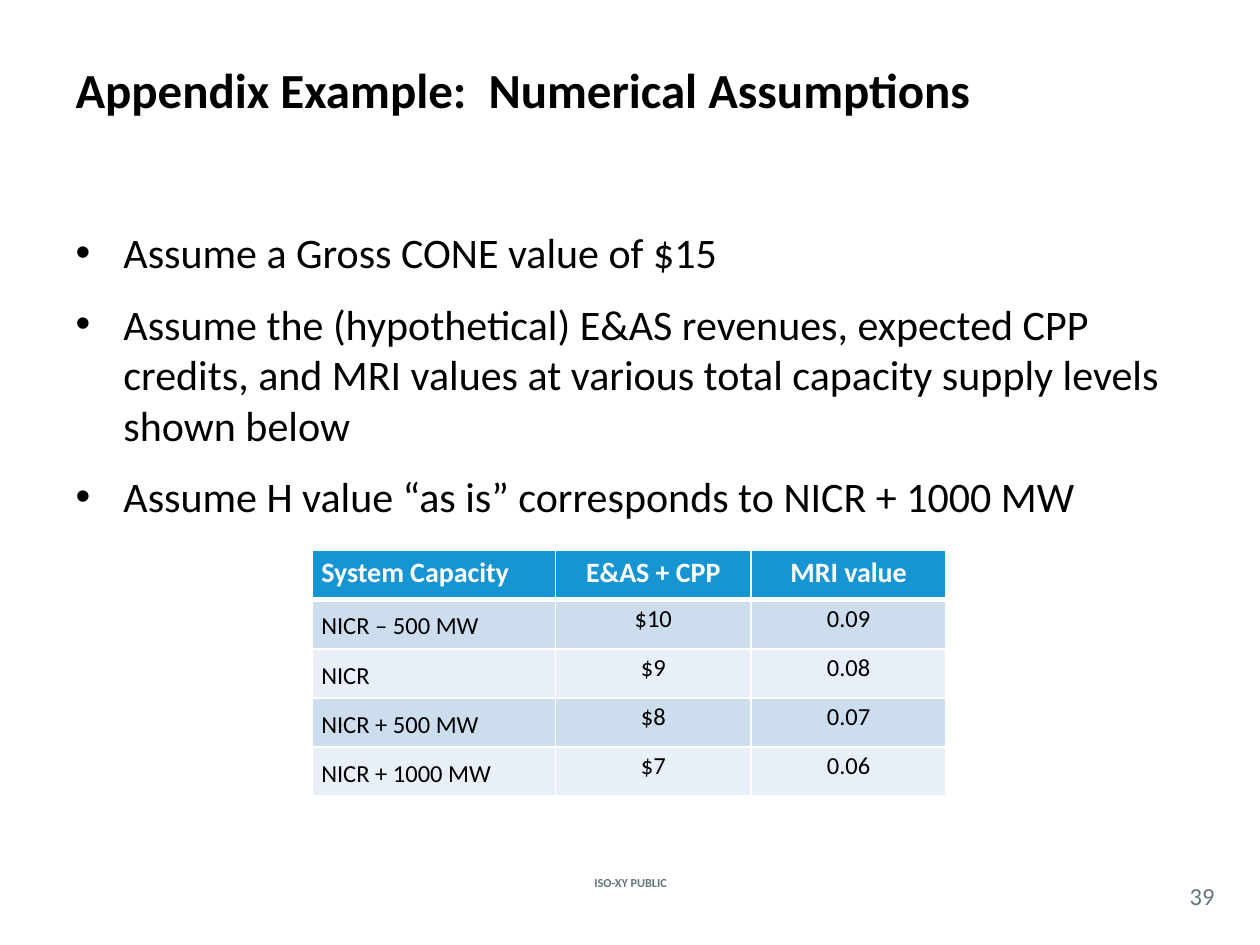
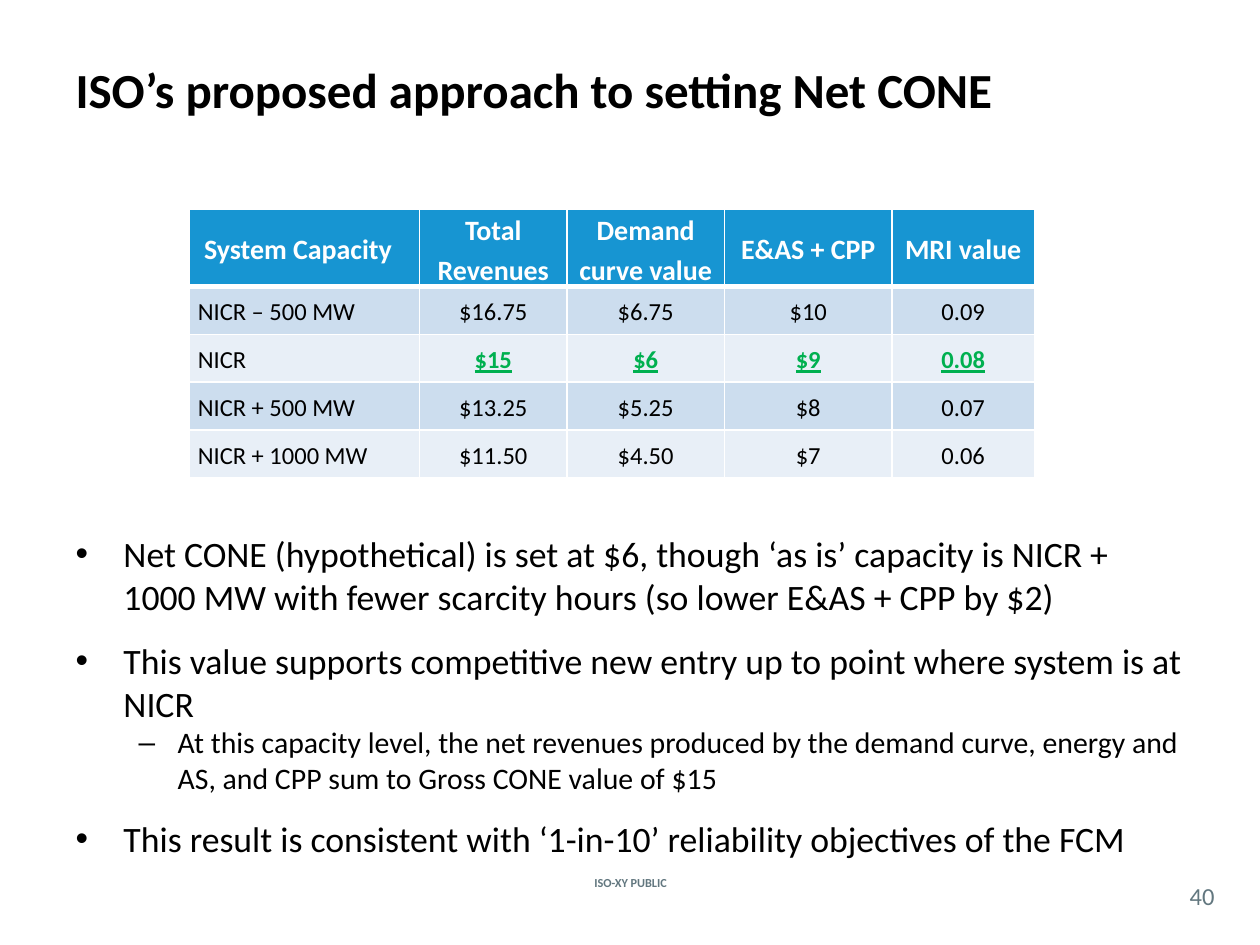
from lxml import etree
from pptx import Presentation
from pptx.dml.color import RGBColor
from pptx.enum import text
from pptx.oxml import ns
from pptx.util import Inches, Pt

COLORS = {
    "ink": "000000", "white": "FFFFFF", "muted": "62777F", "header": "1795D2",
    "band_dark": "CCDDEE", "band_light": "E8EFF7", "highlight": "00B050",
}
FONT = "Calibri"
FOOTER = "ISO-XY PUBLIC"
LEFT, CENTER = text.PP_ALIGN.LEFT, text.PP_ALIGN.CENTER
TOP, MIDDLE = text.MSO_ANCHOR.TOP, text.MSO_ANCHOR.MIDDLE
# Bullet character, left margin and hanging indent for each list level
LEVELS = [("•", 0.38, 0.38), ("–", 0.81, 0.31)]


def rgb(name):
    return RGBColor.from_string(COLORS[name])


class Deck:
    def __init__(self):
        self.presentation = Presentation()
        self.presentation.slide_width = Inches(10)
        self.presentation.slide_height = Inches(7.5)
        self.slide = None

    def add_slide(self, title, number):
        layout = self.presentation.slide_layouts[1]
        self.slide = self.presentation.slides.add_slide(layout)
        self.label(FOOTER, (4.27, 6.92, 1.47, 0.17), 7, bold=True)
        self.label(str(number), (9.33, 6.96, 0.42, 0.29), 14, margin=0)
        shape = self.slide.shapes.title
        self.place(shape, 0.5, 0.08, 9, 1.25)
        shape.text_frame.vertical_anchor = MIDDLE
        paragraph = shape.text_frame.paragraphs[0]
        paragraph.text = title
        self.format(paragraph, 28, bold=True)

    def place(self, shape, left, top, width, height):
        shape.left, shape.top = Inches(left), Inches(top)
        shape.width, shape.height = Inches(width), Inches(height)
        shape.text_frame.auto_size = text.MSO_AUTO_SIZE.NONE

    def format(self, paragraph, size, color="ink", bold=False, align=LEFT):
        paragraph.alignment = align
        font = paragraph.font
        font.name, font.size, font.bold = FONT, Pt(size), bold
        font.color.rgb = rgb(color)

    def label(self, words, box, size, bold=False, margin=None):
        shape = self.slide.shapes.add_textbox(*map(Inches, box))
        frame = shape.text_frame
        frame.word_wrap = True
        frame.vertical_anchor = MIDDLE
        if margin is not None:
            frame.margin_left = frame.margin_right = Inches(margin)
            frame.margin_top = frame.margin_bottom = Inches(margin)
        frame.text = words
        self.format(frame.paragraphs[0], size, "muted", bold, CENTER)

    def bullets(self, items, top, height, sizes):
        """Fill the body with (level, words) items; sizes are per level."""
        body = self.slide.placeholders[1]
        self.place(body, 0.5, top, 9, height)
        frame = body.text_frame
        for index, (level, words) in enumerate(items):
            paragraph = frame.add_paragraph() if index else frame.paragraphs[0]
            paragraph.text = words
            paragraph.level = level
            paragraph.space_before = Pt(12 if index and level == 0 else 0)
            character, margin, hanging = LEVELS[level]
            properties = paragraph._p.get_or_add_pPr()
            properties.set("marL", str(Inches(margin)))
            properties.set("indent", str(-Inches(hanging)))
            etree.SubElement(properties, ns.qn("a:buFont"), typeface="Arial")
            etree.SubElement(properties, ns.qn("a:buChar"), char=character)
            self.format(paragraph, sizes[level])

    def borders(self, cell, top, bottom):
        properties = cell._tc.get_or_add_tcPr()
        for side, width in (("L", 1), ("R", 1), ("T", top), ("B", bottom)):
            line = etree.SubElement(properties, ns.qn(f"a:ln{side}"), w=str(Pt(width)))
            fill = etree.SubElement(line, ns.qn("a:solidFill"))
            etree.SubElement(fill, ns.qn("a:srgbClr"), val=COLORS["white"])

    def table(self, rows, left, top, widths, heights, value_anchor, highlight=None):
        """Draw a banded table; highlight is the row whose values stand out."""
        frame = self.slide.shapes.add_table(
            len(rows), len(widths), Inches(left), Inches(top),
            Inches(sum(widths)), Inches(sum(heights)))
        table = frame.table
        for column, width in zip(table.columns, widths):
            column.width = Inches(width)
        for row, height in zip(table.rows, heights):
            row.height = Inches(height)
        for r, values in enumerate(rows):
            band = "header" if r == 0 else ("band_light", "band_dark")[r % 2]
            for c, value in enumerate(values):
                cell = table.cell(r, c)
                self.borders(cell, 3 if r == 1 else 1, 3 if r == 0 else 1)
                cell.fill.solid()
                cell.fill.fore_color.rgb = rgb(band)
                cell.margin_left = cell.margin_right = Inches(0.07)
                cell.margin_top = cell.margin_bottom = 0
                cell.vertical_anchor = MIDDLE if r and c == 0 else value_anchor
                cell.text = value
                paragraph = cell.text_frame.paragraphs[0]
                paragraph.line_spacing = 1.15
                align = CENTER if c else LEFT
                if r == 0:
                    self.format(paragraph, 16, "white", True, align)
                elif r == highlight and c:
                    self.format(paragraph, 14, "highlight", True, align)
                    paragraph.font.underline = True
                else:
                    self.format(paragraph, 14, align=align)


def main():
    deck = Deck()
    capacities = ["NICR – 500 MW", "NICR", "NICR + 500 MW", "NICR + 1000 MW"]
    credits = ["$10", "$9", "$8", "$7"]
    mri_values = ["0.09", "0.08", "0.07", "0.06"]
    total_revenues = ["$16.75", "$15", "$13.25", "$11.50"]
    curve_values = ["$6.75", "$6", "$5.25", "$4.50"]

    deck.add_slide("Appendix Example:  Numerical Assumptions", 39)
    deck.bullets([
        (0, "Assume a Gross CONE value of $15"),
        (0, "Assume the (hypothetical) E&AS revenues, expected CPP credits, and MRI "
            "values at various total capacity supply levels shown below"),
        (0, "Assume H value “as is” corresponds to NICR + 1000 MW"),
    ], 1.75, 4.58, [24])
    deck.table(
        [("System Capacity", "E&AS + CPP", "MRI value"),
         *zip(capacities, credits, mri_values)],
        2.48, 4.37, [1.93, 1.55, 1.55], [0.39] * 5, TOP)

    deck.add_slide("ISO’s proposed approach to setting Net CONE", 40)
    deck.bullets([
        (0, "Net CONE (hypothetical) is set at $6, though ‘as is’ capacity is NICR + "
            "1000 MW with fewer scarcity hours (so lower E&AS + CPP by $2)"),
        (0, "This value supports competitive new entry up to point where system is "
            "at NICR"),
        (1, "At this capacity level, the net revenues produced by the demand curve, "
            "energy and AS, and CPP sum to Gross CONE value of $15"),
        (0, "This result is consistent with ‘1-in-10’ reliability objectives of the FCM"),
    ], 4.17, 2.67, [20.4, 17])
    deck.table(
        [(" System Capacity", "Total Revenues", "Demand curve value",
          "E&AS + CPP", "MRI value"),
         *zip(capacities, total_revenues, curve_values, credits, mri_values)],
        1.5, 1.66, [1.83, 1.17, 1.25, 1.33, 1.13], [0.61] + [0.38] * 4, MIDDLE,
        highlight=2)

    deck.presentation.save("out.pptx")


if __name__ == "__main__":
    main()
